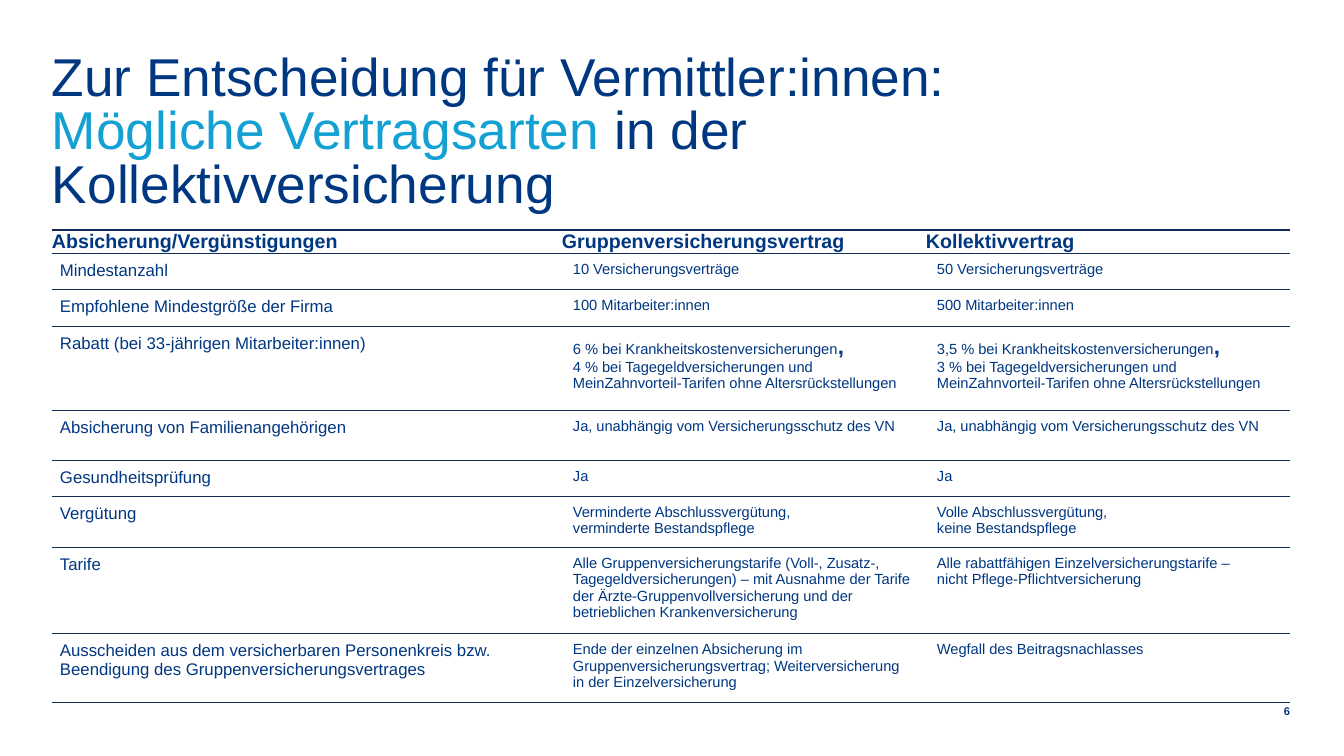
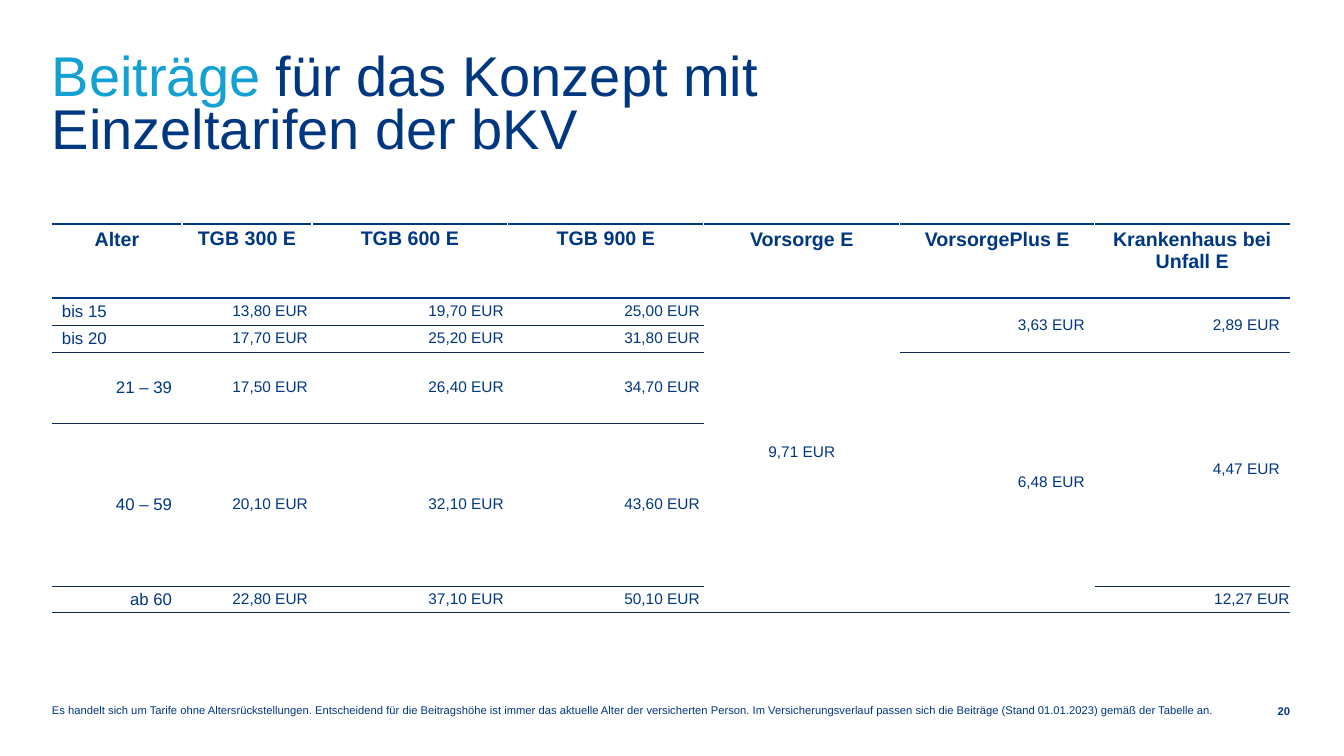
from copy import deepcopy

from lxml.etree import SubElement
from pptx import Presentation
from pptx.dml.color import RGBColor
from pptx.enum.text import MSO_ANCHOR, PP_ALIGN
from pptx.oxml.ns import qn
from pptx.util import Emu, Pt

NAVY = RGBColor(0x00, 0x37, 0x81)
CYAN = RGBColor(0x13, 0xA0, 0xD3)
RULE = RGBColor(0x12, 0x2B, 0x54)
WHITE = RGBColor(0xFF, 0xFF, 0xFF)
FONT = "Arial"
PLAIN_TABLE = "{2D5ABB26-0587-4C30-8999-92F81FD0307C}"
EMU_PER_INCH, PX_PER_INCH = 914400, 100.8

SLIDE_SIZE = (1344, 756)
TITLE_BOX = (52, 54, 1028, 98)
NUMBER_BOX = (1261, 703, 29, 16)
FOOTNOTE_BOX = (52, 703, 1194, 30)

CONTRACT_TITLE = [
    ("Zur Entscheidung für Vermittler:innen: ", NAVY),
    ("Mögliche Vertragsarten ", CYAN),
    ("in der Kollektivversicherung", NAVY),
]
CONTRACT_ORIGIN = (52, 230)
CONTRACT_COLUMNS = [510, 364, 364]
CONTRACT_HEIGHTS = [23, 35, 35, 84, 50, 35, 50, 84, 67]
CONTRACT_ROWS = [
    ("Absicherung/Vergünstigungen", "Gruppenversicherungsvertrag", "Kollektivvertrag"),
    ("Mindestanzahl", "10 Versicherungsverträge", "50 Versicherungsverträge"),
    ("Empfohlene Mindestgröße der Firma", "100 Mitarbeiter:innen", "500 Mitarbeiter:innen"),
    (
        "Rabatt (bei 33-jährigen Mitarbeiter:innen)",
        ("6 % bei Krankheitskostenversicherungen",
         "4 % bei Tagegeldversicherungen und MeinZahnvorteil-Tarifen ohne Altersrückstellungen"),
        ("3,5 % bei Krankheitskostenversicherungen",
         "3 % bei Tagegeldversicherungen und MeinZahnvorteil-Tarifen ohne Altersrückstellungen"),
    ),
    (
        "Absicherung von Familienangehörigen",
        "Ja, unabhängig vom Versicherungsschutz des VN",
        "Ja, unabhängig vom Versicherungsschutz des VN",
    ),
    ("Gesundheitsprüfung", "Ja", "Ja"),
    (
        "Vergütung",
        "Verminderte Abschlussvergütung,\vverminderte Bestandspflege",
        "Volle Abschlussvergütung,\vkeine Bestandspflege",
    ),
    (
        "Tarife",
        "Alle Gruppenversicherungstarife (Voll-, Zusatz-, Tagegeldversicherungen) – mit Ausnahme "
        "der Tarife der Ärzte-Gruppenvollversicherung und der betrieblichen Krankenversicherung",
        "Alle rabattfähigen Einzelversicherungstarife –\vnicht Pflege-Pflichtversicherung",
    ),
    (
        "Ausscheiden aus dem versicherbaren Personenkreis bzw. "
        "Beendigung des Gruppenversicherungsvertrages",
        "Ende der einzelnen Absicherung im Gruppenversicherungsvertrag; "
        "Weiterversicherung in der Einzelversicherung",
        "Wegfall des Beitragsnachlasses",
    ),
]

PREMIUM_TITLE = [("Beiträge", CYAN), (" für das Konzept mit Einzeltarifen der bKV", NAVY)]
PREMIUM_ORIGIN = (52, 224)
PREMIUM_COLUMNS = [130, 130, 196, 196, 196, 195, 195]
PREMIUM_HEIGHTS = [74, 27, 27, 71, 163, 27]
PREMIUM_ROWS = [
    ("Alter", "TGB 300 E", "TGB 600 E", "TGB 900 E", "Vorsorge E", "VorsorgePlus E",
     "Krankenhaus bei Unfall E"),
    ("bis 15", "13,80 EUR", "19,70 EUR", "25,00 EUR", "9,71 EUR", "3,63 EUR", "2,89 EUR"),
    ("bis 20", "17,70 EUR", "25,20 EUR", "31,80 EUR", "", "", ""),
    ("21 – 39", "17,50 EUR", "26,40 EUR", "34,70 EUR", "", "6,48 EUR", "4,47 EUR"),
    ("40 – 59", "20,10 EUR", "32,10 EUR", "43,60 EUR", "", "", ""),
    ("ab 60", "22,80 EUR", "37,10 EUR", "50,10 EUR", "", "", "12,27 EUR"),
]
PREMIUM_SPANS = [(4, 1, 5), (5, 1, 2), (6, 1, 2), (5, 3, 5), (6, 3, 4)]
FOOTNOTE = (
    "Es handelt sich um Tarife ohne Altersrückstellungen. Entscheidend für die Beitragshöhe ist "
    "immer das aktuelle Alter der versicherten Person. Im Versicherungsverlauf passen sich die "
    "Beiträge (Stand 01.01.2023) gemäß der Tabelle an."
)


def px(length):
    return Emu(round(length * EMU_PER_INCH / PX_PER_INCH))


def style_run(run, size, color=NAVY, bold=False):
    run.font.name = FONT
    run.font.size = Pt(size)
    run.font.color.rgb = color
    run.font.bold = bold


def style_paragraph(paragraph, size, bold=False, align=PP_ALIGN.LEFT):
    paragraph.alignment = align
    for run in paragraph.runs:
        style_run(run, size, bold=bold)


def style_breaks(paragraph):
    for line_break in paragraph._p.findall(qn("a:br")):
        line_break.append(deepcopy(line_break.getprevious().find(qn("a:rPr"))))


def add_text_box(slide, box, anchor=MSO_ANCHOR.TOP):
    frame = slide.shapes.add_textbox(*map(px, box)).text_frame
    frame.word_wrap = True
    frame.vertical_anchor = anchor
    frame.margin_left = frame.margin_right = frame.margin_top = frame.margin_bottom = 0
    return frame


def add_title(slide, parts, size):
    paragraph = add_text_box(slide, TITLE_BOX).paragraphs[0]
    paragraph.line_spacing = Pt(38)
    for text, color in parts:
        run = paragraph.add_run()
        run.text = text
        style_run(run, size, color)


def add_page_number(slide, number):
    frame = add_text_box(slide, NUMBER_BOX, MSO_ANCHOR.MIDDLE)
    frame.text = str(number)
    frame.paragraphs[0].line_spacing = Pt(10)
    style_paragraph(frame.paragraphs[0], 8, True, PP_ALIGN.RIGHT)


def add_plain_table(slide, origin, columns, heights):
    size = (sum(columns), sum(heights))
    frame = slide.shapes.add_table(len(heights), len(columns), *map(px, origin + size))
    table = frame.table
    table.first_row = table.horz_banding = False
    table._tbl.tblPr.find(qn("a:tableStyleId")).text = PLAIN_TABLE
    for column, width in zip(table.columns, columns):
        column.width = px(width)
    for row, height in zip(table.rows, heights):
        row.height = px(height)
    return table


def set_margins(cell, side, edge):
    cell.margin_left = cell.margin_right = px(side)
    cell.margin_top = cell.margin_bottom = px(edge)


def set_borders(cell, **borders):
    properties = cell._tc.get_or_add_tcPr()
    for side in "LRTB":
        if side in borders:
            color, width = borders[side]
            line = SubElement(properties, qn(f"a:ln{side}"), w=str(Pt(width)))
            fill = SubElement(line, qn("a:solidFill"))
            SubElement(fill, qn("a:srgbClr"), val=str(color))


def fill_contract_table(table):
    last = len(CONTRACT_ROWS) - 1
    for i, row in enumerate(CONTRACT_ROWS):
        for j, content in enumerate(row):
            cell = table.cell(i, j)
            paragraph = cell.text_frame.paragraphs[0]
            size = 14 if i == 0 else 12 if j == 0 else 10.5
            if isinstance(content, tuple):
                paragraph.text = content[0]
                style_paragraph(paragraph, size)
                comma = paragraph.add_run()
                comma.text = ","
                style_run(comma, 16, bold=True)
                paragraph.add_line_break()
                remainder = paragraph.add_run()
                remainder.text = content[1]
                style_run(remainder, size)
            else:
                paragraph.text = content
                style_paragraph(paragraph, size, i == 0)
            style_breaks(paragraph)
            if i == 0:
                set_margins(cell, 0, 0)
                cell.vertical_anchor = MSO_ANCHOR.MIDDLE
            else:
                set_margins(cell, 8 if j == 0 else 11, 8)
            top = 1 if i < 2 else 0.5
            bottom = 1 if i in (0, last) else 0.5
            set_borders(cell, T=(RULE, top), B=(RULE, bottom))
            cell.fill.background()


def fill_premium_header(table):
    last = len(PREMIUM_COLUMNS) - 1
    for j, text in enumerate(PREMIUM_ROWS[0]):
        cell = table.cell(0, j)
        cell.text_frame.text = text
        style_paragraph(cell.text_frame.paragraphs[0], 14, True, PP_ALIGN.CENTER)
        set_margins(cell, *((4, 4) if 1 <= j <= 3 else (6, 5)))
        borders = {"T": (NAVY, 1), "B": (NAVY, 1)}
        if j > 0:
            borders["L"] = (WHITE, 1)
        if j < last:
            borders["R"] = (WHITE, 1)
        set_borders(cell, **borders)
        cell.fill.solid()
        cell.fill.fore_color.rgb = WHITE


def fill_premium_body(table):
    last = len(PREMIUM_ROWS) - 1
    span_ends = {(first, column): end for column, first, end in PREMIUM_SPANS}
    closing_cells = {(end, column) for column, _, end in PREMIUM_SPANS}
    for column, first, end in PREMIUM_SPANS:
        table.cell(first, column).merge(table.cell(end, column))
    for i, row in enumerate(PREMIUM_ROWS[1:], 1):
        for j, text in enumerate(row):
            cell = table.cell(i, j)
            paragraph = cell.text_frame.paragraphs[0]
            end = span_ends.get((i, j), i)
            borders = {}
            if not cell.is_spanned:
                borders["T"] = (NAVY, 1) if i == 1 else (RULE, 0.5)
            if not cell.is_spanned or (i, j) in closing_cells:
                borders["B"] = (RULE, 1 if end == last else 0.5)
            set_borders(cell, **borders)
            cell.fill.background()
            if cell.is_spanned:
                set_margins(cell, 0, 0)
                paragraph._p.get_or_add_endParaRPr().set("sz", "800")
                continue
            paragraph.text = text
            align = PP_ALIGN.RIGHT
            if j == 0 and i < 3:
                align = PP_ALIGN.LEFT
            elif j == 4:
                align = PP_ALIGN.CENTER
            style_paragraph(paragraph, 12 if j == 0 else 11, align=align)
            cell.vertical_anchor = MSO_ANCHOR.MIDDLE
            side = 4 if 1 <= j <= 3 else 10
            if i == last and j == 6:
                side = 0
            set_margins(cell, side, 3)
            if j == 4:
                cell.margin_bottom = px(10)


def add_contract_slide(slide):
    add_title(slide, CONTRACT_TITLE, 38)
    table = add_plain_table(slide, CONTRACT_ORIGIN, CONTRACT_COLUMNS, CONTRACT_HEIGHTS)
    fill_contract_table(table)
    add_page_number(slide, 6)


def add_premium_slide(slide):
    add_title(slide, PREMIUM_TITLE, 40)
    table = add_plain_table(slide, PREMIUM_ORIGIN, PREMIUM_COLUMNS, PREMIUM_HEIGHTS)
    fill_premium_header(table)
    fill_premium_body(table)
    frame = add_text_box(slide, FOOTNOTE_BOX)
    frame.text = FOOTNOTE
    style_paragraph(frame.paragraphs[0], 8)
    add_page_number(slide, 20)


def main():
    presentation = Presentation()
    presentation.slide_width, presentation.slide_height = map(px, SLIDE_SIZE)
    for build in (add_contract_slide, add_premium_slide):
        build(presentation.slides.add_slide(presentation.slide_layouts[6]))
    presentation.save("out.pptx")


if __name__ == "__main__":
    main()
